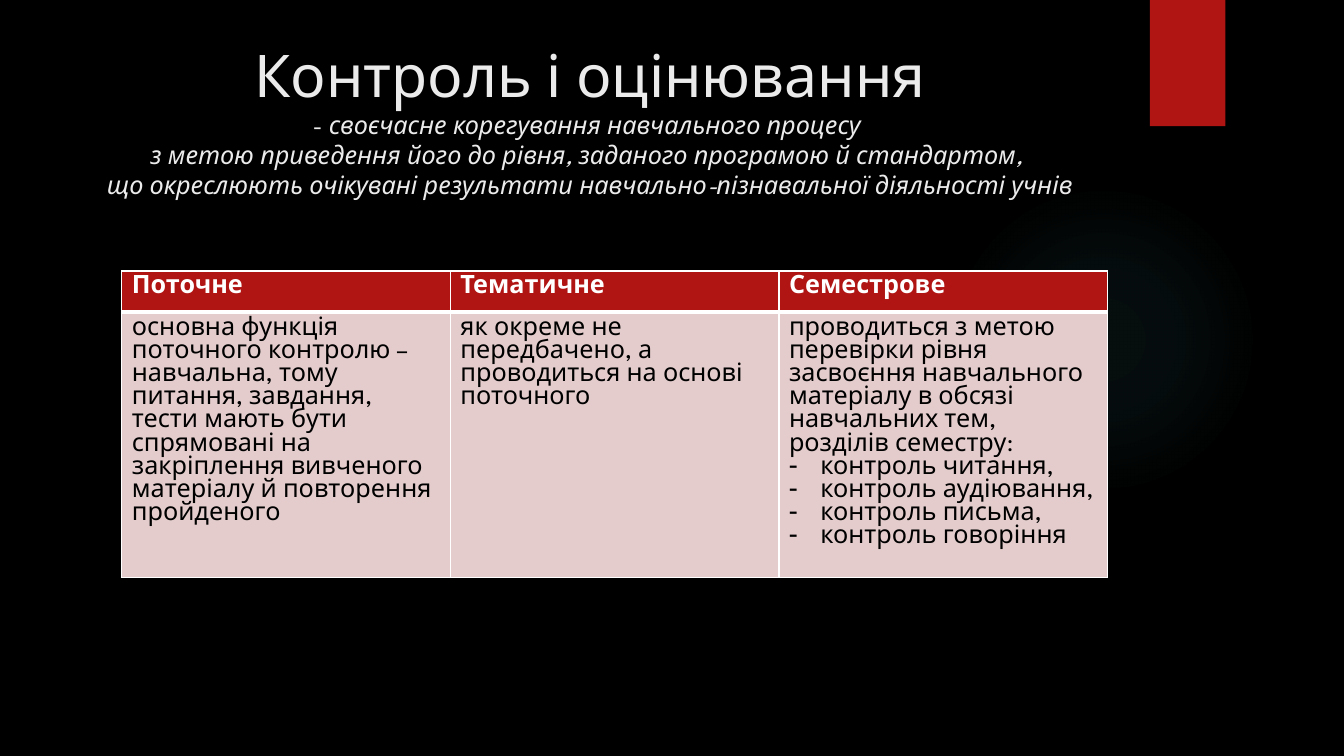
import dataclasses

import pptx
import pptx.dml.color
import pptx.enum.shapes
import pptx.enum.text
import pptx.oxml
import pptx.util

Cm = pptx.util.Cm
Pt = pptx.util.Pt
FONT = "League Spartan"
NS = 'xmlns:a="http://schemas.openxmlformats.org/drawingml/2006/main"'
RED, WHITE, PALE = "B01513", "FFFFFF", "E4CCCC"


@dataclasses.dataclass
class Column:
    head: str
    body: str
    items: tuple[str, ...] = ()


@dataclasses.dataclass
class Part:
    text: str
    size: int
    italic: bool = False


COLUMNS = [
    Column("Поточне", "основна функція поточного контролю – навчальна, тому питання, "
           "завдання, тести мають бути спрямовані на закріплення вивченого "
           "матеріалу й повторення пройденого"),
    Column("Тематичне", "як окреме не передбачено, а проводиться на основі поточного"),
    Column("Семестрове", "проводиться з метою перевірки рівня засвоєння навчального "
           "матеріалу в обсязі навчальних тем, розділів семестру:",
           ("контроль читання,", "контроль аудіювання,",
            "контроль письма,", "контроль говоріння")),
]
TITLE = [
    Part("Контроль і оцінювання\n", 42),
    Part("- ", 18),
    Part("своєчасне корегування навчального процесу \n"
         "з метою приведення його до рівня, заданого програмою й стандартом, \n"
         "що окреслюють очікувані результати навчально-пізнавальної діяльності учнів",
         18, True),
]


def color(code: str) -> pptx.dml.color.RGBColor:
    return pptx.dml.color.RGBColor.from_string(code)


def paint(fill, code: str) -> None:
    fill.solid()
    fill.fore_color.rgb = color(code)


def style(font, code: str, **values) -> None:
    for name, value in {"name": FONT, "size": Pt(18), **values}.items():
        setattr(font, name, value)
    font.color.rgb = color(code)


def node(text: str):
    return pptx.oxml.parse_xml(text.replace(">", f" {NS}>", 1))


def add_shape(slide, kind, *box: float):
    shape = slide.shapes.add_shape(kind, *map(Cm, box))
    shape.shadow.inherit = False
    shape.line.fill.background()
    paint(shape.fill, RED)
    return shape


def add_decor(slide) -> None:
    kinds = pptx.enum.shapes.MSO_SHAPE
    # Soft glow
    glow = add_shape(slide, kinds.OVAL, 23.9, 4.65, 7.82, 7.82)
    stops = "".join(
        f'<a:gs pos="{pos}000"><a:srgbClr val="50B9C1"><a:alpha val="{alpha}000"/>'
        "</a:srgbClr></a:gs>" for pos, alpha in ((0, 7), (36, 6), (69, 0)))
    props = glow._element.spPr
    solid = props.find(pptx.oxml.ns.qn("a:solidFill"))
    props.replace(solid, node(
        f'<a:gradFill><a:gsLst>{stops}</a:gsLst><a:path path="circle">'
        '<a:fillToRect l="50000" t="50000" r="50000" b="50000"/></a:path></a:gradFill>'))
    # Red tab with a shadow
    tab = add_shape(slide, kinds.RECTANGLE, 28.98, 0, 1.9, 3.18)
    effects = tab._element.spPr.find(pptx.oxml.ns.qn("a:effectLst"))
    effects.append(node(
        '<a:outerShdw blurRad="38100" dist="25400" dir="5400000" rotWithShape="0">'
        '<a:srgbClr val="000000"><a:alpha val="45000"/></a:srgbClr></a:outerShdw>'))


def add_title(slide) -> None:
    title = slide.shapes.title
    box = {"left": 1.8, "top": 0.84, "width": 26.14, "height": 4.88}
    for name, value in box.items():
        setattr(title, name, Cm(value))
    frame = title.text_frame
    frame.word_wrap = True
    frame.auto_size = pptx.enum.text.MSO_AUTO_SIZE.NONE
    frame.vertical_anchor = pptx.enum.text.MSO_ANCHOR.TOP
    para = frame.paragraphs[0]
    para.alignment = pptx.enum.text.PP_ALIGN.CENTER
    for part in TITLE:
        for count, line in enumerate(part.text.split("\n")):
            if count:
                para.add_line_break()
            if line:
                run = para.add_run()
                run.text = line
                style(run.font, "EBEBEB", size=Pt(part.size), italic=part.italic)
    slide.shapes._spTree.append(title._element)


def fill_cell(cell, lines: list[str], back: str, ink: str, bold: bool, base: int) -> None:
    paint(cell.fill, back)
    frame = cell.text_frame
    for count, line in enumerate(lines):
        para = frame.add_paragraph() if count else frame.paragraphs[0]
        if count:
            props = para._p.get_or_add_pPr()
            props.set("marL", str(Cm(0.79)))
            props.set("indent", str(-Cm(0.79)))
            props.append(node('<a:buFontTx/>'.replace("/>", "></a:buFontTx>")))
            props.append(node('<a:buChar char="-"></a:buChar>'))
        run = para.add_run()
        run.text = line
        style(run.font, ink, bold=bold)
    # White borders go before the fill
    props = cell._tc.get_or_add_tcPr()
    for place, (side, width) in enumerate({"L": 1, "R": 1, "T": 1, "B": base}.items()):
        props.insert(place, node(
            f'<a:ln{side} w="{Pt(width)}"><a:solidFill><a:srgbClr val="{WHITE}"/>'
            f"</a:solidFill></a:ln{side}>"))


def add_table(slide) -> None:
    high = (1.04, 6.68)
    frame = slide.shapes.add_table(2, len(COLUMNS), Cm(3.07), Cm(6.83),
                                   Cm(24.84), Cm(sum(high)))
    table = frame.table
    for row, size in zip(table.rows, high):
        row.height = Cm(size)
    for place, column in enumerate(COLUMNS):
        table.columns[place].width = Cm(8.28)
        fill_cell(table.cell(0, place), [column.head], RED, WHITE, True, 3)
        fill_cell(table.cell(1, place), [column.body, *column.items],
                  PALE, "000000", False, 1)
        # The shared edge keeps the heavy line
        edge = table.cell(1, place)._tc.tcPr.find(pptx.oxml.ns.qn("a:lnT"))
        edge.set("w", str(Pt(3)))


def main() -> None:
    deck = pptx.Presentation()
    deck.slide_width, deck.slide_height = Cm(33.87), Cm(19.05)
    slide = deck.slides.add_slide(deck.slide_layouts[5])
    paint(slide.background.fill, "000000")
    add_decor(slide)
    add_title(slide)
    add_table(slide)
    deck.save("out.pptx")


if __name__ == "__main__":
    main()
